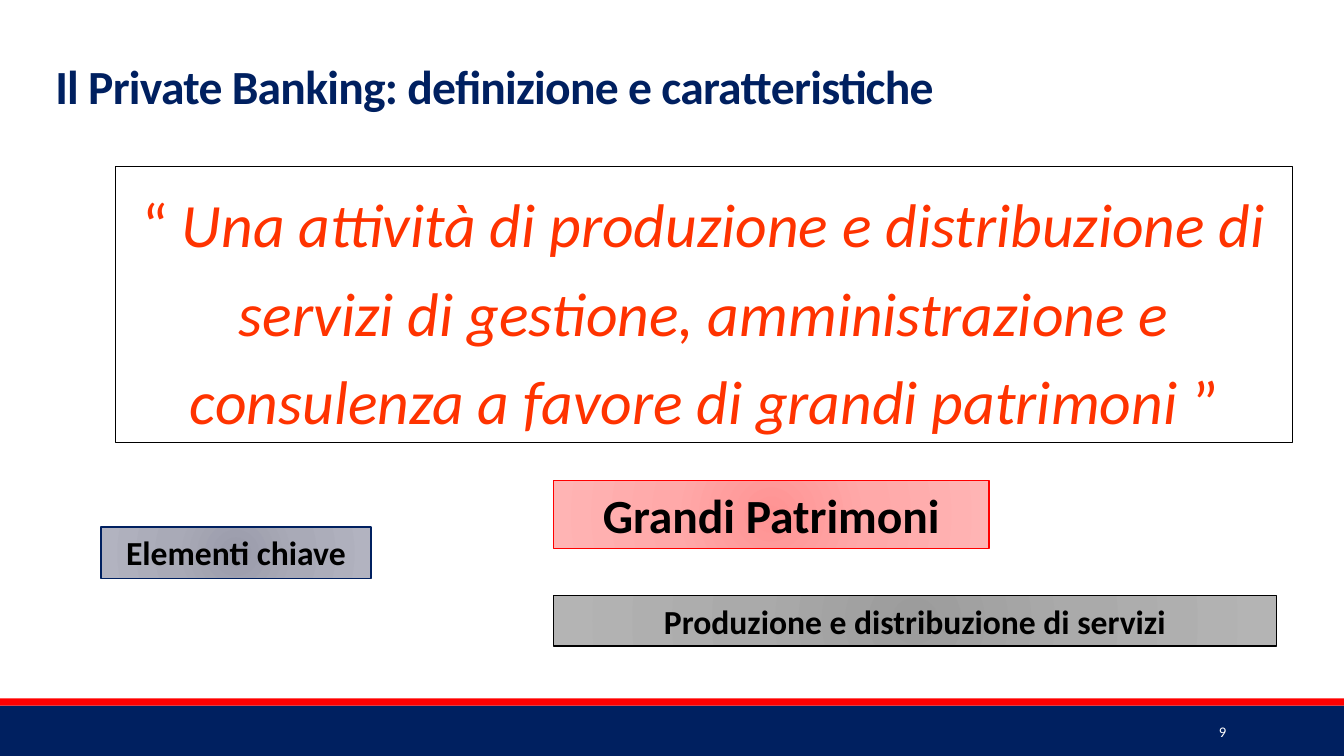
from dataclasses import dataclass
from typing import Optional

import pptx
import pptx.dml.color
import pptx.enum.shapes
import pptx.enum.text
import pptx.oxml
import pptx.oxml.ns
import pptx.util

RGBColor = pptx.dml.color.RGBColor
Anchor = pptx.enum.text.MSO_ANCHOR
Align = pptx.enum.text.PP_ALIGN
AutoSize = pptx.enum.text.MSO_AUTO_SIZE

PX = 9144
FONT = "Calibri"
NAVY = RGBColor(0x00, 0x20, 0x60)
RED = RGBColor(0xFF, 0x00, 0x00)
ORANGE = RGBColor(0xFF, 0x33, 0x00)
BLACK = RGBColor(0x00, 0x00, 0x00)
WHITE = RGBColor(0xFF, 0xFF, 0xFF)
NAVY_TINTS = (RGBColor(0x9A, 0x9B, 0xAA), RGBColor(0xA9, 0xAA, 0xB7), RGBColor(0xB2, 0xB3, 0xC0))
RED_TINTS = (RGBColor(0xFF, 0x93, 0x93), RGBColor(0xFF, 0xA9, 0xA9), RGBColor(0xFF, 0xB4, 0xB4))
GREY_TINTS = (RGBColor(0x9C, 0x9C, 0x9C), RGBColor(0xAA, 0xAA, 0xAA), RGBColor(0xB4, 0xB4, 0xB4))
TINT_POSITIONS = (0, 45, 100)


@dataclass(frozen=True)
class Box:
    left: int
    top: int
    width: int
    height: int

    def emu(self) -> tuple[int, int, int, int]:
        return self.left * PX, self.top * PX, self.width * PX, self.height * PX


@dataclass(frozen=True)
class TextStyle:
    size: float
    color: RGBColor
    bold: bool = False


@dataclass(frozen=True)
class Label:
    box: Box
    text: str
    size: int
    tints: tuple[RGBColor, ...]
    border: RGBColor


LABELS = (
    Label(Box(100, 523, 268, 51), "Elementi chiave", 24, NAVY_TINTS, NAVY),
    Label(Box(549, 477, 432, 67), "Grandi Patrimoni", 34, RED_TINTS, RED),
    Label(Box(549, 591, 717, 50), "Produzione e distribuzione di servizi", 24, GREY_TINTS, BLACK),
)
FOOTER_BANDS = ((Box(0, 700, 1333, 50), NAVY), (Box(0, 693, 1333, 7), RED))
QUOTE_RUNS = (
    ("“ ", False),
    ("Una attività di produzione e distribuzione di servizi di gestione, "
     "amministrazione e consulenza a favore di grandi patrimoni ", True),
    ("”", False),
)


def add_rectangle(slide: pptx.slide.Slide, box: Box, fill: Optional[RGBColor] = None,
                  border: Optional[RGBColor] = None, border_width: float = 1):
    shape = slide.shapes.add_shape(pptx.enum.shapes.MSO_SHAPE.RECTANGLE, *box.emu())
    shape.shadow.inherit = False
    if fill is None:
        shape.fill.background()
    else:
        shape.fill.solid()
        shape.fill.fore_color.rgb = fill
    if border is None:
        shape.line.fill.background()
    else:
        shape.line.color.rgb = border
        shape.line.width = pptx.util.Pt(border_width)
    return shape


def set_radial_fill(shape, tints: tuple[RGBColor, ...]) -> None:
    stops = "".join(
        f'<a:gs pos="{position * 1000}"><a:srgbClr val="{tint}"/></a:gs>'
        for position, tint in zip(TINT_POSITIONS, tints)
    )
    gradient = pptx.oxml.parse_xml(
        f'<a:gradFill {pptx.oxml.ns.nsdecls("a")} rotWithShape="1"><a:gsLst>{stops}</a:gsLst>'
        '<a:path path="circle"><a:fillToRect l="100000" t="100000" r="100000" b="100000"/>'
        '</a:path></a:gradFill>'
    )
    properties = shape.element.spPr
    blank_fill = properties.find(pptx.oxml.ns.qn("a:noFill"))
    properties.replace(blank_fill, gradient)


def start_paragraph(shape, anchor: Anchor, alignment: Align):
    frame = shape.text_frame
    frame.word_wrap = True
    frame.vertical_anchor = anchor
    paragraph = frame.paragraphs[0]
    paragraph.alignment = alignment
    return paragraph


def add_run(paragraph, text: str, style: TextStyle, italic: bool = False):
    run = paragraph.add_run()
    run.text = text
    run.font.name = FONT
    run.font.size = pptx.util.Pt(style.size)
    run.font.color.rgb = style.color
    run.font.bold = style.bold
    run.font.italic = italic
    return run


def add_footer(slide: pptx.slide.Slide) -> None:
    for box, color in FOOTER_BANDS:
        add_rectangle(slide, box, fill=color)
    number = slide.shapes.add_textbox(*Box(1083, 706, 143, 40).emu())
    paragraph = start_paragraph(number, Anchor.MIDDLE, Align.RIGHT)
    add_run(paragraph, "9", TextStyle(10.5, WHITE))


def add_title(slide: pptx.slide.Slide) -> None:
    title = slide.shapes.add_textbox(*Box(45, 36, 1123, 82).emu())
    paragraph = start_paragraph(title, Anchor.BOTTOM, Align.LEFT)
    paragraph.line_spacing = 0.85
    run = add_run(paragraph, "Il Private Banking: definizione e caratteristiche",
                  TextStyle(34, NAVY, bold=True))
    run.font._element.set("spc", "-50")


def add_quote(slide: pptx.slide.Slide) -> None:
    quote = add_rectangle(slide, Box(115, 165, 1167, 274), border=BLACK, border_width=0.75)
    frame = quote.text_frame
    frame.margin_left = frame.margin_right = 0
    paragraph = start_paragraph(quote, Anchor.TOP, Align.CENTER)
    paragraph.line_spacing = 1.2
    paragraph.space_before = pptx.util.Pt(12)
    paragraph.space_after = pptx.util.Pt(2)
    for text, italic in QUOTE_RUNS:
        add_run(paragraph, text, TextStyle(44, ORANGE), italic)


def add_label(slide: pptx.slide.Slide, label: Label) -> None:
    shape = add_rectangle(slide, label.box, border=label.border)
    set_radial_fill(shape, label.tints)
    shape.text_frame.auto_size = AutoSize.SHAPE_TO_FIT_TEXT
    paragraph = start_paragraph(shape, Anchor.TOP, Align.CENTER)
    add_run(paragraph, label.text, TextStyle(label.size, BLACK, bold=True))


def main() -> None:
    presentation = pptx.Presentation()
    presentation.slide_width = 1333 * PX
    presentation.slide_height = 750 * PX
    slide = presentation.slides.add_slide(presentation.slide_layouts[6])
    add_footer(slide)
    add_title(slide)
    add_quote(slide)
    for label in LABELS:
        add_label(slide, label)
    presentation.save("out.pptx")


if __name__ == "__main__":
    main()
